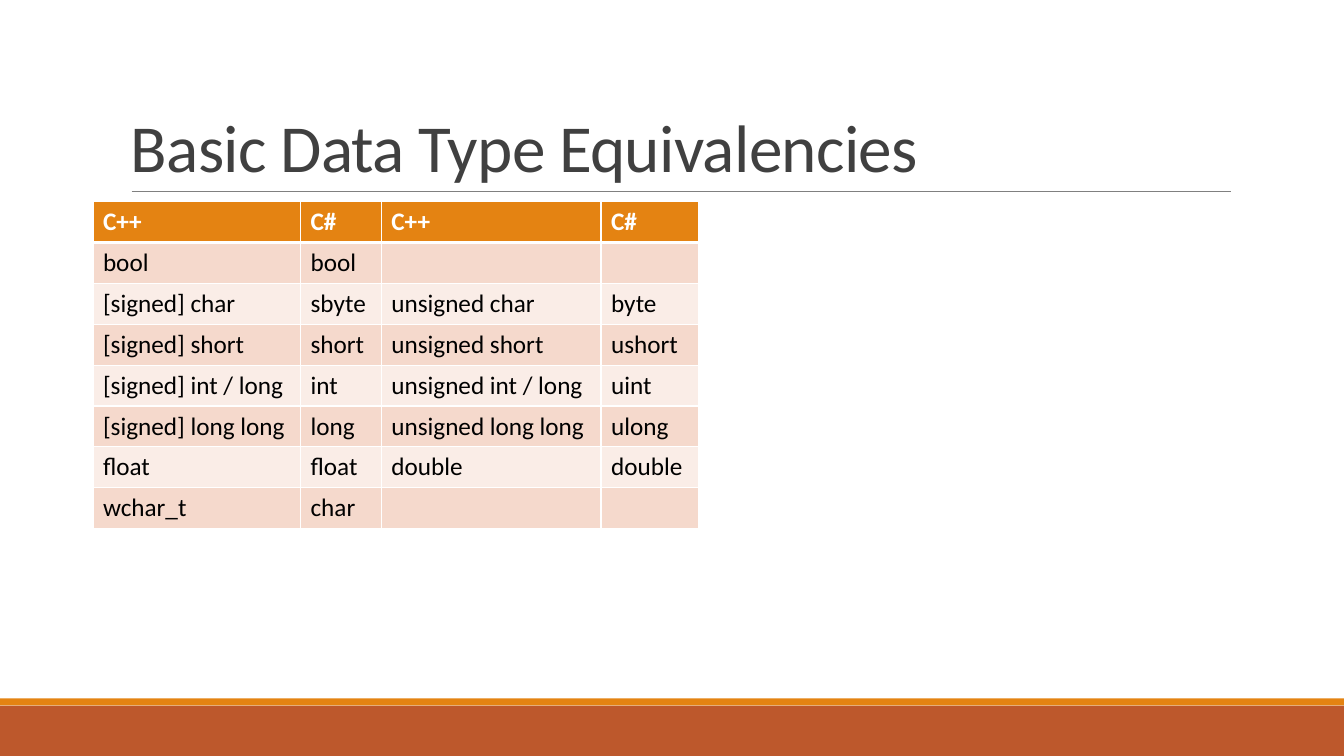
import pptx
import pptx.dml.color
import pptx.enum.shapes
import pptx.enum.text
import pptx.oxml
import pptx.oxml.ns
import pptx.util

Pt = pptx.util.Pt
SLIDE_WIDTH, SLIDE_HEIGHT = 960, 540
ORANGE, RUST = "E48312", "BD582C"
BAND_FILLS = ("FAEDE7", "F5D9CC")
COLUMN_WIDTHS = (148.3, 57.7, 157, 69.8)
ROW_HEIGHT = 29.2
TYPE_ROWS = (
    ("C++", "C#", "C++", "C#"),
    ("bool", "bool", "", ""),
    ("[signed] char", "sbyte", "unsigned char", "byte"),
    ("[signed] short", "short", "unsigned short", "ushort"),
    ("[signed] int / long", "int", "unsigned int / long", "uint"),
    ("[signed] long long", "long", "unsigned long long", "ulong"),
    ("float", "float", "double", "double"),
    ("wchar_t", "char", "", ""),
)


def color(value):
    """Turn a hex string into a colour."""
    return pptx.dml.color.RGBColor.from_string(value)


def write_text(text_frame, text, size=18, fill="000000", bold=False,
               font="Calibri", line_spacing=None, tracking=None):
    """Write one formatted paragraph into a text frame."""
    paragraph = text_frame.paragraphs[0]
    paragraph.line_spacing = line_spacing
    paragraph.font.size = Pt(size)
    if not text:
        return
    run = paragraph.add_run()
    run.text = text
    run.font.name = font
    run.font.size = Pt(size)
    run.font.bold = bold
    run.font.color.rgb = color(fill)
    if tracking is not None:
        run.font._element.set("spc", str(int(tracking * 100)))


class SlideBuilder:
    """Hold the border style and the slide, and draw elements on it."""

    def __init__(self, slide, border_color="FFFFFF"):
        """Keep the slide and the table border colour."""
        self.slide = slide
        self.border_color = border_color

    def bar(self, top, height, fill):
        """Draw a full-width bar."""
        shape = self.slide.shapes.add_shape(
            pptx.enum.shapes.MSO_SHAPE.RECTANGLE,
            0, Pt(top), Pt(SLIDE_WIDTH), Pt(height))
        shape.shadow.inherit = False
        shape.fill.solid()
        shape.fill.fore_color.rgb = color(fill)
        shape.line.fill.background()

    def rule(self, left, right, top, line_color, width):
        """Draw a horizontal line."""
        connector = self.slide.shapes.add_connector(
            pptx.enum.shapes.MSO_CONNECTOR.STRAIGHT,
            Pt(left), Pt(top), Pt(right), Pt(top))
        connector.line.color.rgb = color(line_color)
        connector.line.width = Pt(width)
        connector._element.spPr.append(
            pptx.oxml.parse_xml(f'<a:effectLst {pptx.oxml.ns.nsdecls("a")}/>'))

    def title(self, left, top, width, height, text, **text_format):
        """Add a bottom-anchored title."""
        shape = self.slide.shapes.add_textbox(
            Pt(left), Pt(top), Pt(width), Pt(height))
        shape.text_frame.word_wrap = True
        shape.text_frame.vertical_anchor = pptx.enum.text.MSO_ANCHOR.BOTTOM
        write_text(shape.text_frame, text, **text_format)

    def border(self, cell, side, width):
        """Add a solid border to one side of a cell."""
        cell._tc.get_or_add_tcPr().append(pptx.oxml.parse_xml(
            f'<a:ln{side} {pptx.oxml.ns.nsdecls("a")} w="{Pt(width)}">'
            f'<a:solidFill><a:srgbClr val="{self.border_color}"/></a:solidFill>'
            f'</a:ln{side}>'))

    def table(self, left, top, rows, widths, row_height):
        """Add a banded table with a header row."""
        table = self.slide.shapes.add_table(
            len(rows), len(widths), Pt(left), Pt(top),
            Pt(sum(widths)), Pt(row_height * len(rows))).table
        for column, width in zip(table.columns, widths):
            column.width = Pt(width)
        for row_index, values in enumerate(rows):
            table.rows[row_index].height = Pt(row_height)
            header = row_index == 0
            sides = {"L": 1, "R": 1, "T": 3 if row_index == 1 else 1,
                     "B": 3 if header else 1}
            for column_index, text in enumerate(values):
                cell = table.cell(row_index, column_index)
                for side, width in sides.items():
                    self.border(cell, side, width)
                cell.fill.solid()
                cell.fill.fore_color.rgb = color(
                    ORANGE if header else BAND_FILLS[row_index % 2])
                write_text(cell.text_frame, text, bold=header,
                           fill="FFFFFF" if header else "000000")


def main():
    """Build and save the slide."""
    presentation = pptx.Presentation()
    presentation.slide_width = Pt(SLIDE_WIDTH)
    presentation.slide_height = Pt(SLIDE_HEIGHT)
    builder = SlideBuilder(
        presentation.slides.add_slide(presentation.slide_layouts[6]))
    builder.bar(504, 36, RUST)
    builder.bar(498.75, 5.2, ORANGE)
    builder.rule(94, 879, 136.8, "808080", 0.5)
    builder.title(86.4, 22.6, 792, 114.2, "Basic Data Type Equivalencies",
                  size=48, fill="404040", line_spacing=0.85, tracking=-0.5)
    builder.table(66.4, 144, TYPE_ROWS, COLUMN_WIDTHS, ROW_HEIGHT)
    presentation.save("out.pptx")


if __name__ == "__main__":
    main()
